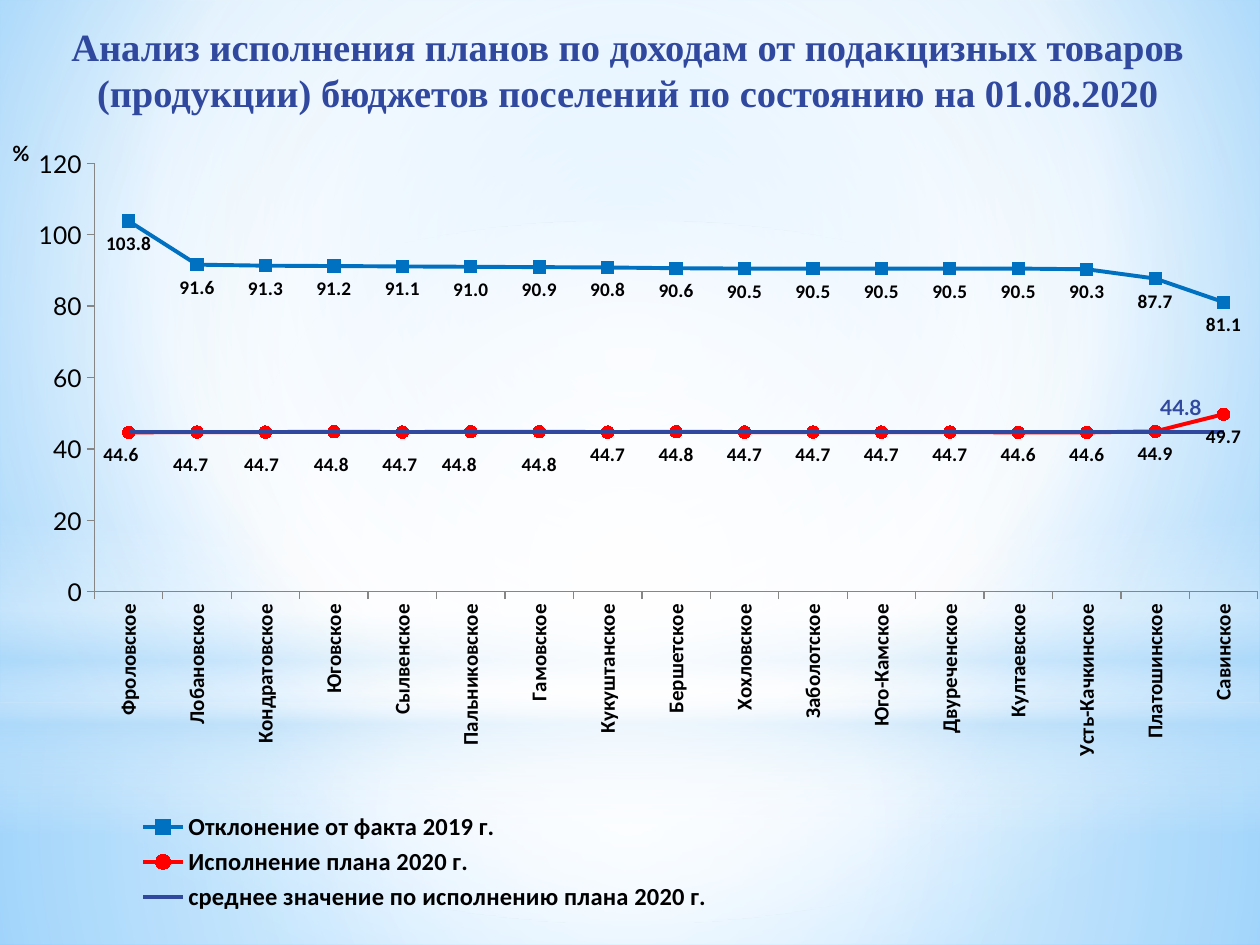
from dataclasses import dataclass
from typing import NamedTuple, Optional

from lxml.etree import SubElement
from pptx import Presentation
from pptx.chart.chart import Chart
from pptx.chart.data import CategoryChartData
from pptx.dml.color import RGBColor
from pptx.enum.chart import XL_CHART_TYPE as ChartType
from pptx.enum.chart import XL_LABEL_POSITION as LabelPosition
from pptx.enum.chart import XL_LEGEND_POSITION as LegendPosition
from pptx.enum.chart import XL_MARKER_STYLE as Marker
from pptx.enum.chart import XL_TICK_MARK as TickMark
from pptx.enum.shapes import MSO_SHAPE as Preset
from pptx.enum.text import MSO_ANCHOR, MSO_AUTO_SIZE, PP_ALIGN
from pptx.oxml.ns import qn
from pptx.util import Cm, Pt


@dataclass(frozen=True)
class Theme:
    navy: str = "31489F"
    blue: str = "0070C0"
    red: str = "FF0000"
    black: str = "000000"
    axis: str = "868686"
    title_font: str = "Times New Roman"
    chart_font: str = "Calibri"
    number_font: str = "Lato"
    title_size: float = 22
    large: float = 14
    medium: float = 12
    small: float = 11
    line_width: float = 2.25


class Stop(NamedTuple):
    position: int
    color: str
    alpha: int = 100


class Gradient(NamedTuple):
    """Circular around the inset rectangle (l, t, r, b); vertical if it is None."""
    stops: list[Stop]
    center: Optional[tuple[int, int, int, int]] = (50, 50, 50, 50)


class Backdrop(NamedTuple):
    preset: Preset
    top: float
    height: float
    gradient: Gradient


class LineSeries(NamedTuple):
    name: str
    values: list[float]
    color: str
    marker: Marker
    labelled: bool = True


THEME = Theme()
WIDTH, HEIGHT = 25.4, 19.05
TITLE = ("Анализ исполнения планов по доходам от подакцизных товаров "
         "(продукции) бюджетов поселений по состоянию на 01.08.2020")
PALE = "B4DCFA"
WHITE = "FFFFFF"
PAGE = Gradient([Stop(0, "9ED5FF"), Stop(60, WHITE), Stop(100, "5BB9FF")], (20, 10, 20, 60))
BACKDROPS = [
    Backdrop(Preset.RECTANGLE, 14.17, 4.88,
             Gradient([Stop(0, WHITE, 91), Stop(37, WHITE, 76), Stop(100, PALE, 79)])),
    Backdrop(Preset.RECTANGLE, 0, 14.17,
             Gradient([Stop(0, WHITE, 89), Stop(48, WHITE, 62), Stop(100, PALE, 79)])),
    Backdrop(Preset.RECTANGLE, 10.46, 6.35,
             Gradient([Stop(0, WHITE, 0), Stop(29, WHITE, 30), Stop(45, PALE, 40),
                       Stop(55, WHITE, 26), Stop(65, PALE, 60), Stop(100, WHITE, 0)], None)),
    Backdrop(Preset.OVAL, 4.45, 14.17, Gradient([Stop(0, WHITE), Stop(56, WHITE, 0)])),
]
SETTLEMENTS = [
    "Фроловское", "Лобановское", "Кондратовское", "Юговское", "Сылвенское", "Пальниковское",
    "Гамовское", "Кукуштанское", "Бершетское", "Хохловское", "Заболотское", "Юго-Камское",
    "Двуреченское", "Култаевское", "Усть-Качкинское", "Платошинское", "Савинское",
]
SERIES = [
    LineSeries("Отклонение от факта 2019 г.",
               [103.8, 91.6, 91.3, 91.2, 91.1, 91, 90.9, 90.8, 90.6, 90.5, 90.5, 90.5, 90.5,
                90.5, 90.3, 87.7, 81.1], THEME.blue, Marker.SQUARE),
    LineSeries("Исполнение плана 2020 г.",
               [44.6, 44.7, 44.7, 44.8, 44.7, 44.8, 44.8, 44.7, 44.8, 44.7, 44.7, 44.7, 44.7,
                44.6, 44.6, 44.9, 49.7], THEME.red, Marker.CIRCLE),
    LineSeries("среднее значение по исполнению плана 2020 г.",
               [44.8] * len(SETTLEMENTS), THEME.navy, Marker.NONE, False),
]
PLAN_LABEL_SHIFTS = [(-0.6, 0), (-0.5, 1.2), (-0.3, 1.2), (-0.2, 1.2), (-0.2, 1.2),
                     (-0.9, 1.2), (0, 1.2)]  # percent of the chart size
AVERAGE_LABEL_POINT = 15


def style_font(font, size: float, color: str = THEME.black, name: str = THEME.chart_font,
               bold: bool = True) -> None:
    font.size, font.name, font.bold = Pt(size), name, bold
    font.color.rgb = RGBColor.from_string(color)


def apply_gradient(fill, holder, gradient: Gradient) -> None:
    """Fill the property element `holder`, which `fill` belongs to."""
    fill.solid()
    solid = holder.find(qn("a:solidFill"))
    element = SubElement(holder, qn("a:gradFill"), rotWithShape="1")
    holder.replace(solid, element)
    stop_list = SubElement(element, qn("a:gsLst"))
    for stop in gradient.stops:
        item = SubElement(stop_list, qn("a:gs"), pos=str(stop.position * 1000))
        color = SubElement(item, qn("a:srgbClr"), val=stop.color)
        if stop.alpha < 100:
            SubElement(color, qn("a:alpha"), val=str(stop.alpha * 1000))
    if gradient.center is None:
        SubElement(element, qn("a:lin"), ang="5400000", scaled="0")
    else:
        circle = SubElement(element, qn("a:path"), path="circle")
        insets = {side: str(inset * 1000) for side, inset in zip("ltrb", gradient.center)}
        SubElement(circle, qn("a:fillToRect"), **insets)


def add_backdrop(slide, backdrop: Backdrop) -> None:
    shape = slide.shapes.add_shape(backdrop.preset, 0, Cm(backdrop.top), Cm(WIDTH),
                                   Cm(backdrop.height))
    shape.shadow.inherit = False
    shape.line.fill.background()
    apply_gradient(shape.fill, shape.element.spPr, backdrop.gradient)


def place(parent, index: int, x: float, y: float, size: Optional[tuple[float, float]] = None,
          target: Optional[str] = None, edge: bool = True) -> None:
    """Give a chart part a manual layout in fractions; without edge, x and y are shifts."""
    for old in parent.findall(qn("c:layout")):
        parent.remove(old)
    layout = SubElement(parent, qn("c:layout"))
    parent.insert(index, layout)
    manual = SubElement(layout, qn("c:manualLayout"))
    settings = [("layoutTarget", target)] if target else []
    if edge:
        settings += [("xMode", "edge"), ("yMode", "edge")]
    settings += [("x", x), ("y", y)]
    settings += zip("wh", size or ())
    for name, value in settings:
        SubElement(manual, qn(f"c:{name}"), val=str(value))


def format_axes(chart: Chart) -> None:
    category, value = chart.category_axis, chart.value_axis
    for axis in (category, value):
        axis.has_major_gridlines = False
        axis.major_tick_mark = TickMark.OUTSIDE
        axis.minor_tick_mark = TickMark.NONE
        axis.format.line.color.rgb = RGBColor.from_string(THEME.axis)
    style_font(category.tick_labels.font, THEME.medium)
    category._element.find(f"{qn('c:txPr')}/{qn('a:bodyPr')}").set("rot", "-5400000")
    style_font(value.tick_labels.font, THEME.large, name=THEME.number_font, bold=False)
    value.tick_labels.number_format = "#,##0"
    value.tick_labels.number_format_is_linked = False
    value.minimum_scale, value.maximum_scale, value.major_unit = 0, 120, 20
    frame = value.axis_title.text_frame
    frame.text = "%"
    style_font(frame.paragraphs[0].font, THEME.medium, name=THEME.number_font)
    frame._txBody.bodyPr.set("rot", "0")
    place(value.axis_title._element, 1, 0.01, 0.05)


def format_series(series, data: LineSeries) -> None:
    color = RGBColor.from_string(data.color)
    series.smooth = False
    series.format.line.color.rgb = color
    series.format.line.width = Pt(THEME.line_width)
    series.marker.style = data.marker
    if data.marker != Marker.NONE:
        series.marker.size = 7
        series.marker.format.fill.solid()
        series.marker.format.fill.fore_color.rgb = color
        series.marker.format.line.color.rgb = color
    labels = series.data_labels
    labels.show_value = data.labelled
    if data.labelled:
        style_font(labels.font, THEME.small)
        labels.position = LabelPosition.BELOW
        labels.number_format, labels.number_format_is_linked = "#,##0.0", False


def shift_label(series, index: int, position: LabelPosition, shift: tuple[float, float],
                **font_style) -> None:
    label = series.points[index].data_label
    style_font(label.font, **font_style)
    label.position = position
    element = series.data_labels._element.findall(qn("c:dLbl"))[-1]
    place(element, 1, shift[0] / 100, shift[1] / 100, edge=False)


def add_income_chart(slide) -> None:
    data = CategoryChartData(number_format="#,##0.0")
    data.categories = SETTLEMENTS
    for item in SERIES:
        data.add_series(item.name, item.values)
    chart = slide.shapes.add_chart(ChartType.LINE_MARKERS, Cm(-0.08), Cm(1.85), Cm(25.45),
                                   Cm(16.97), data).chart
    chart.has_title = False
    style_font(chart.font, 18, name=THEME.number_font, bold=False)
    chart.plots[0].vary_by_categories = False
    place(chart._chartSpace.chart.plotArea, 0, 0.078, 0.085, (0.922, 0.509), "inner")
    format_axes(chart)
    for series, item in zip(chart.series, SERIES):
        format_series(series, item)
    _, plan, average = chart.series
    for index, shift in enumerate(PLAN_LABEL_SHIFTS):
        shift_label(plan, index, LabelPosition.BELOW, shift, size=THEME.small)
    shift_label(average, AVERAGE_LABEL_POINT, LabelPosition.RIGHT, (0, -3), size=THEME.medium,
                color=THEME.navy, name=THEME.number_font)
    chart.has_legend = True
    chart.legend.position = LegendPosition.BOTTOM
    chart.legend.include_in_layout = False
    style_font(chart.legend.font, THEME.large)
    place(chart.legend._element, 1, 0.09, 0.85, (0.5, 0.13))


def format_title(title) -> None:
    title.left, title.top, title.width, title.height = Cm(0), Cm(0.33), Cm(25.3), Cm(1.6)
    frame = title.text_frame
    frame.text = TITLE
    frame.word_wrap, frame.auto_size = True, MSO_AUTO_SIZE.NONE
    frame.vertical_anchor = MSO_ANCHOR.TOP
    paragraph = frame.paragraphs[0]
    paragraph.alignment = PP_ALIGN.CENTER
    style_font(paragraph.font, THEME.title_size, THEME.navy, THEME.title_font)


def main() -> None:
    presentation = Presentation()
    presentation.slide_width, presentation.slide_height = Cm(WIDTH), Cm(HEIGHT)
    slide = presentation.slides.add_slide(presentation.slide_layouts[5])
    fill = slide.background.fill
    fill.solid()
    apply_gradient(fill, slide.element.find(f".//{qn('p:bgPr')}"), PAGE)
    for backdrop in BACKDROPS:
        add_backdrop(slide, backdrop)
    title = slide.shapes.title
    title.element.getparent().append(title.element)  # in front of the backdrops
    format_title(title)
    add_income_chart(slide)
    presentation.save("out.pptx")


if __name__ == "__main__":
    main()
